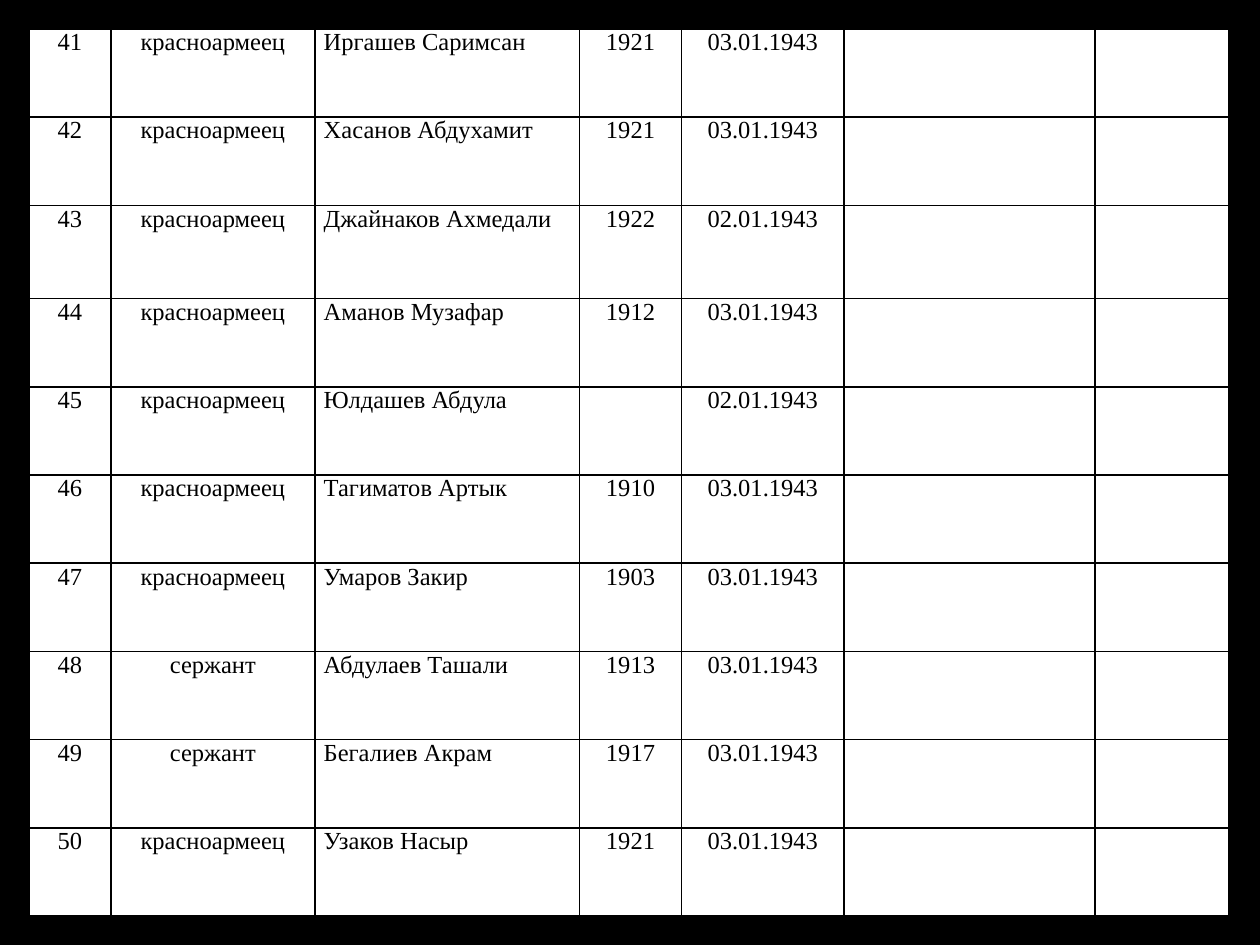
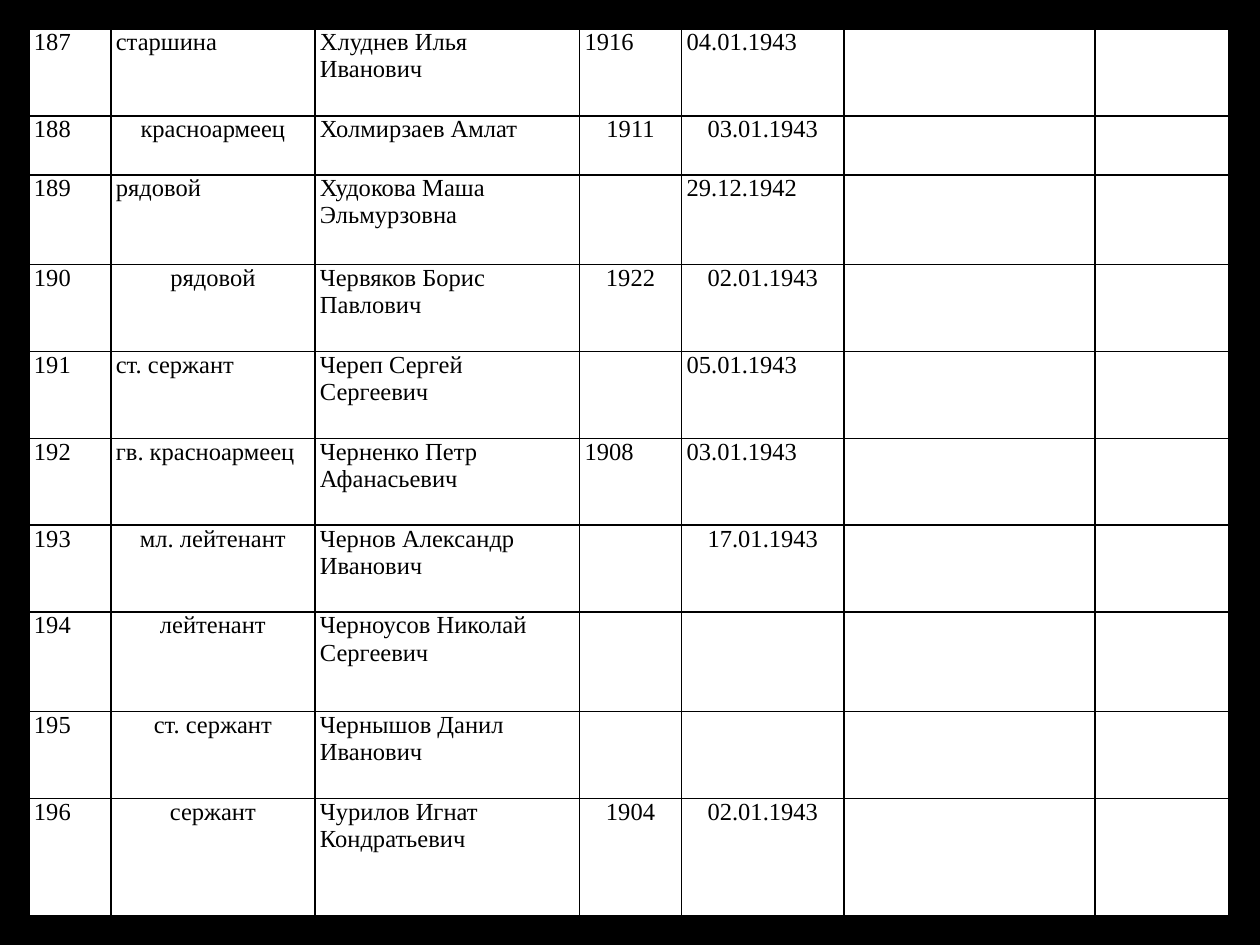
from lxml.etree import SubElement
from pptx import Presentation
from pptx.dml.color import RGBColor
from pptx.enum.text import MSO_ANCHOR, PP_ALIGN
from pptx.oxml.ns import qn
from pptx.util import Emu, Pt

COLOURS = {"backdrop": "000000", "paper": "FFFFFF", "ink": "000000", "rule": "000000"}
GRID_COLUMNS, GRID_ROWS = 1000, 750
BLANK_LAYOUT = 6
ORIGIN = 23, 23
FIELD_WIDTHS = [65, 162, 210, 81, 129, 199, 106]

# number, rank, name, year of birth, date of death
ROLL_41_50 = [
    ("41", "красноармеец", "Иргашев Саримсан", "1921", "03.01.1943"),
    ("42", "красноармеец", "Хасанов Абдухамит", "1921", "03.01.1943"),
    ("43", "красноармеец", "Джайнаков Ахмедали", "1922", "02.01.1943"),
    ("44", "красноармеец", "Аманов Музафар", "1912", "03.01.1943"),
    ("45", "красноармеец", "Юлдашев Абдула", "", "02.01.1943"),
    ("46", "красноармеец", "Тагиматов Артык", "1910", "03.01.1943"),
    ("47", "красноармеец", "Умаров Закир", "1903", "03.01.1943"),
    ("48", "сержант", "Абдулаев Ташали", "1913", "03.01.1943"),
    ("49", "сержант", "Бегалиев Акрам", "1917", "03.01.1943"),
    ("50", "красноармеец", "Узаков Насыр", "1921", "03.01.1943"),
]
ROLL_187_196 = [
    ("187", "старшина", "Хлуднев Илья Иванович", "1916", "04.01.1943"),
    ("188", "красноармеец", "Холмирзаев Амлат", "1911", "03.01.1943"),
    ("189", "рядовой", "Худокова Маша Эльмурзовна", "", "29.12.1942"),
    ("190", "рядовой", "Червяков Борис Павлович", "1922", "02.01.1943"),
    ("191", "ст. сержант", "Череп Сергей Сергеевич", "", "05.01.1943"),
    ("192", "гв. красноармеец", "Черненко Петр Афанасьевич", "1908", "03.01.1943"),
    ("193", "мл. лейтенант", "Чернов Александр Иванович", "", "17.01.1943"),
    ("194", "лейтенант", "Черноусов Николай Сергеевич", "", ""),
    ("195", "ст. сержант", "Чернышов Данил Иванович", "", ""),
    ("196", "сержант", "Чурилов Игнат Кондратьевич", "1904", "02.01.1943"),
]

# One letter per field: c is centred, l is left
ALL_CENTRED, DETAILS_CENTRED, ALL_LEFT = "cclcc", "lclcc", "lllll"
ALIGNMENTS = {"c": PP_ALIGN.CENTER, "l": PP_ALIGN.LEFT}
LEFT_ENTRIES = {"187", "189", "191", "192"}


class RollDeck:
    def __init__(self):
        self.deck = Presentation()
        self.deck.slide_width, self.deck.slide_height = Emu(9144000), Emu(6858000)
        self.slide = None
        self.text_format = {"name": "Times New Roman", "size": Pt(14)}

    def across(self, columns):
        return Emu(round(self.deck.slide_width * columns / GRID_COLUMNS))

    def down(self, rows):
        return Emu(round(self.deck.slide_height * rows / GRID_ROWS))

    def colour(self, role):
        return RGBColor.from_string(COLOURS[role])

    def new_slide(self):
        self.slide = self.deck.slides.add_slide(self.deck.slide_layouts[BLANK_LAYOUT])
        backdrop = self.slide.background.fill
        backdrop.solid()
        backdrop.fore_color.rgb = self.colour("backdrop")

    def rule_cell(self, cell):
        """Draw the four borders; they must come before the cell's fill."""
        properties = cell._tc.get_or_add_tcPr()
        for side in ("a:lnL", "a:lnR", "a:lnT", "a:lnB"):
            border = SubElement(properties, qn(side), w=str(Pt(1)))
            SubElement(SubElement(border, qn("a:solidFill")), qn("a:srgbClr"),
                       val=COLOURS["rule"])

    def style_cell(self, cell, padding):
        self.rule_cell(cell)
        cell.fill.solid()
        cell.fill.fore_color.rgb = self.colour("paper")
        cell_format = {"margin_left": self.across(padding),
                       "margin_right": self.across(padding),
                       "margin_top": 0, "margin_bottom": 0,
                       "vertical_anchor": MSO_ANCHOR.TOP}
        for attribute, value in cell_format.items():
            setattr(cell, attribute, value)

    def fill_in(self, cell, wording, alignment):
        paragraph = cell.text_frame.paragraphs[0]
        paragraph.alignment = alignment
        run = paragraph.add_run()
        run.text = wording
        for attribute, value in self.text_format.items():
            setattr(run.font, attribute, value)
        run.font.color.rgb = self.colour("ink")

    def roll(self, entries, heights, padding, layout_of):
        left, top = ORIGIN
        table = self.slide.shapes.add_table(
            len(entries), len(FIELD_WIDTHS), self.across(left), self.down(top),
            self.across(sum(FIELD_WIDTHS)), self.down(sum(heights))).table
        table.first_row = table.horz_banding = False
        for column, width in zip(table.columns, FIELD_WIDTHS):
            column.width = self.across(width)
        for row, height, entry in zip(table.rows, heights, entries):
            row.height = self.down(height)
            for cell in row.cells:
                self.style_cell(cell, padding)
            for cell, wording, letter in zip(row.cells, entry, layout_of(entry[0])):
                if wording:
                    self.fill_in(cell, wording, ALIGNMENTS[letter])


def main():
    book = RollDeck()
    book.new_slide()
    book.roll(ROLL_41_50, [70, 70, 74] + [70] * 7, 7, lambda number: ALL_CENTRED)
    book.new_slide()
    book.roll(ROLL_187_196, [69, 47, 71] + [69] * 4 + [79, 69, 93], 4,
              lambda number: ALL_LEFT if number in LEFT_ENTRIES else DETAILS_CENTRED)
    book.deck.save("out.pptx")


if __name__ == "__main__":
    main()
